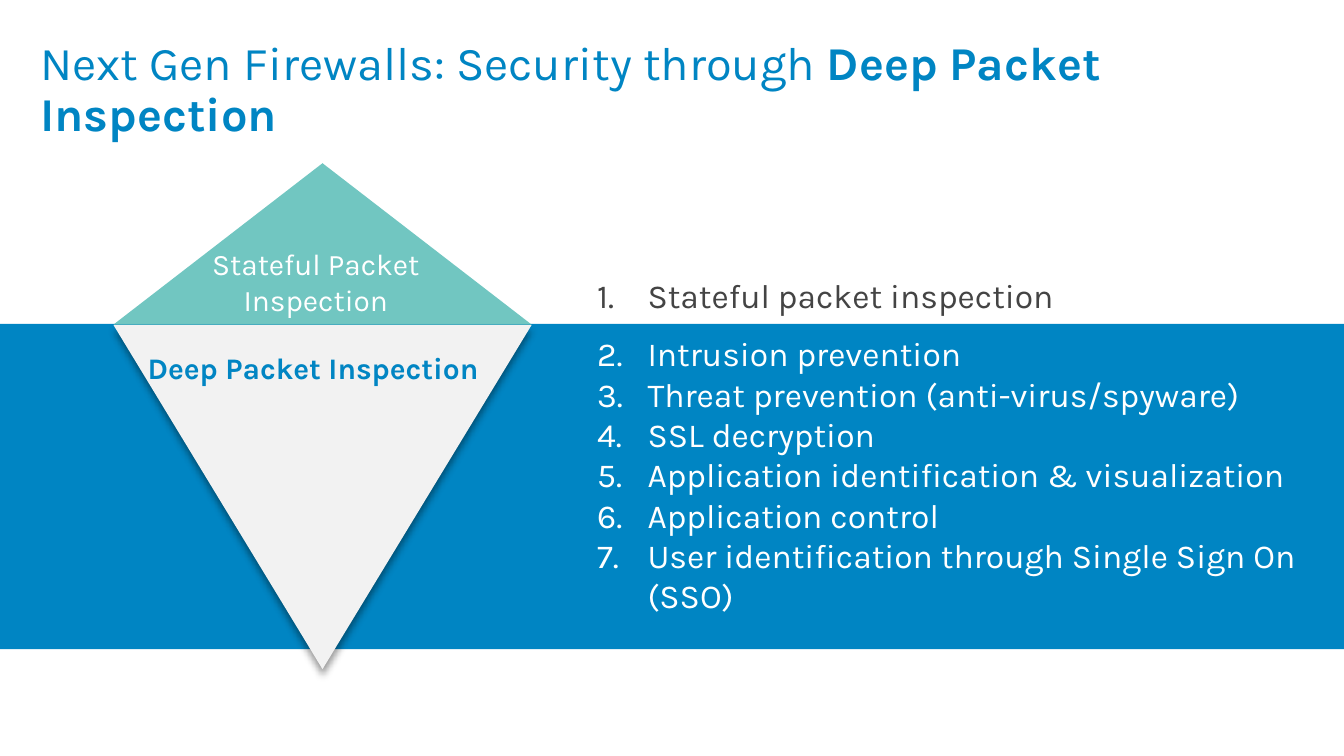
from lxml import etree
from pptx import Presentation
from pptx import util as u
from pptx.dml.color import RGBColor
from pptx.enum import shapes, text
from pptx.oxml.ns import qn

SCALE = 4572
FONT = "Karla"
BLUE = "0085C3"
TEAL = "71C6C1"
PALE = "F2F2F2"
WHITE = "FFFFFF"
GREY = "444444"
THREATS = [
    "Intrusion prevention",
    "Threat prevention (anti-virus/spyware)",
    "SSL decryption",
    "Application identification & visualization",
    "Application control",
    "User identification through Single Sign On (SSO)",
]


def px(n):
    return u.Emu(n * SCALE)


def hue(code):
    return RGBColor.from_string(code)


def form(slide, kind, box, fill):
    shape = slide.shapes.add_shape(kind, *map(px, box))
    shape.shadow.inherit = False
    shape.fill.solid()
    shape.fill.fore_color.rgb = hue(fill)
    shape.line.fill.background()
    return shape


def style(run, size, color, bold=False):
    run.font.name = FONT
    run.font.size = u.Pt(size)
    run.font.bold = bold
    run.font.color.rgb = hue(color)


def label(slide, box, lines, size, color, bold=False, align=text.PP_ALIGN.LEFT):
    frame = slide.shapes.add_textbox(*map(px, box)).text_frame
    frame.word_wrap = True
    frame.text = "\n".join(lines)
    for para in frame.paragraphs:
        para.alignment = align
        for run in para.runs:
            style(run, size, color, bold)
    return frame


def number(frame, start):
    for para in frame.paragraphs:
        props = para._p.get_or_add_pPr()
        props.set("marL", str(px(75)))
        props.set("indent", str(-px(75)))
        mark = etree.SubElement(props, qn("a:buAutoNum"), type="arabicPeriod")
        if start > 1:
            mark.set("startAt", str(start))


def shade(shape):
    effect = shape.element.spPr.find(qn("a:effectLst"))
    cast = etree.SubElement(
        effect, qn("a:outerShdw"), blurRad=str(u.Pt(4)), dist=str(u.Pt(3)),
        dir="5400000", algn="t", rotWithShape="0")
    tint = etree.SubElement(cast, qn("a:srgbClr"), val="000000")
    etree.SubElement(tint, qn("a:alpha"), val="40000")


def title(slide, box):
    frame = label(slide, box, ["Next Gen Firewalls: Security through "], 25.2, BLUE)
    frame.margin_left = frame.margin_right = 0
    frame.margin_top = frame.margin_bottom = 0
    para = frame.paragraphs[0]
    para.line_spacing = 0.9
    run = para.add_run()
    run.text = "Deep Packet Inspection"
    style(run, 25.2, BLUE, True)


def diamond(slide, box):
    left, top, width, height = box
    peak = 240
    kind = shapes.MSO_SHAPE.ISOSCELES_TRIANGLE
    form(slide, kind, (left, top, width, peak), TEAL)
    base = form(slide, kind, (left, top + peak + 1, width, height - peak - 1), PALE)
    base.element.spPr.find(qn("a:xfrm")).set("flipV", "1")
    shade(base)
    mid = text.PP_ALIGN.CENTER
    label(slide, (left + 32, top + 113, 538, 128),
          ["Stateful Packet Inspection"], 16, WHITE, align=mid)
    label(slide, (left + 28, top + 268, 538, 74),
          ["Deep Packet Inspection"], 16, "0185C3", True, mid)


def features(slide, box):
    left, top, width, height = box
    first = label(slide, (left, top, width - 94, 80),
                  ["Stateful packet inspection"], 18, GREY)
    number(first, 1)
    rest = label(slide, (left, top + 86, width, height - 86), THREATS, 18, WHITE)
    number(rest, 2)


def main():
    deck = Presentation()
    deck.slide_width, deck.slide_height = px(2000), px(1125)
    slide = deck.slides.add_slide(deck.slide_layouts[6])
    title(slide, (60, 60, 1740, 146))
    form(slide, shapes.MSO_SHAPE.RECTANGLE, (0, 482, 2000, 484), BLUE)
    diamond(slide, (169, 243, 622, 753))
    features(slide, (869, 400, 1131, 530))
    deck.save("out.pptx")


if __name__ == "__main__":
    main()
